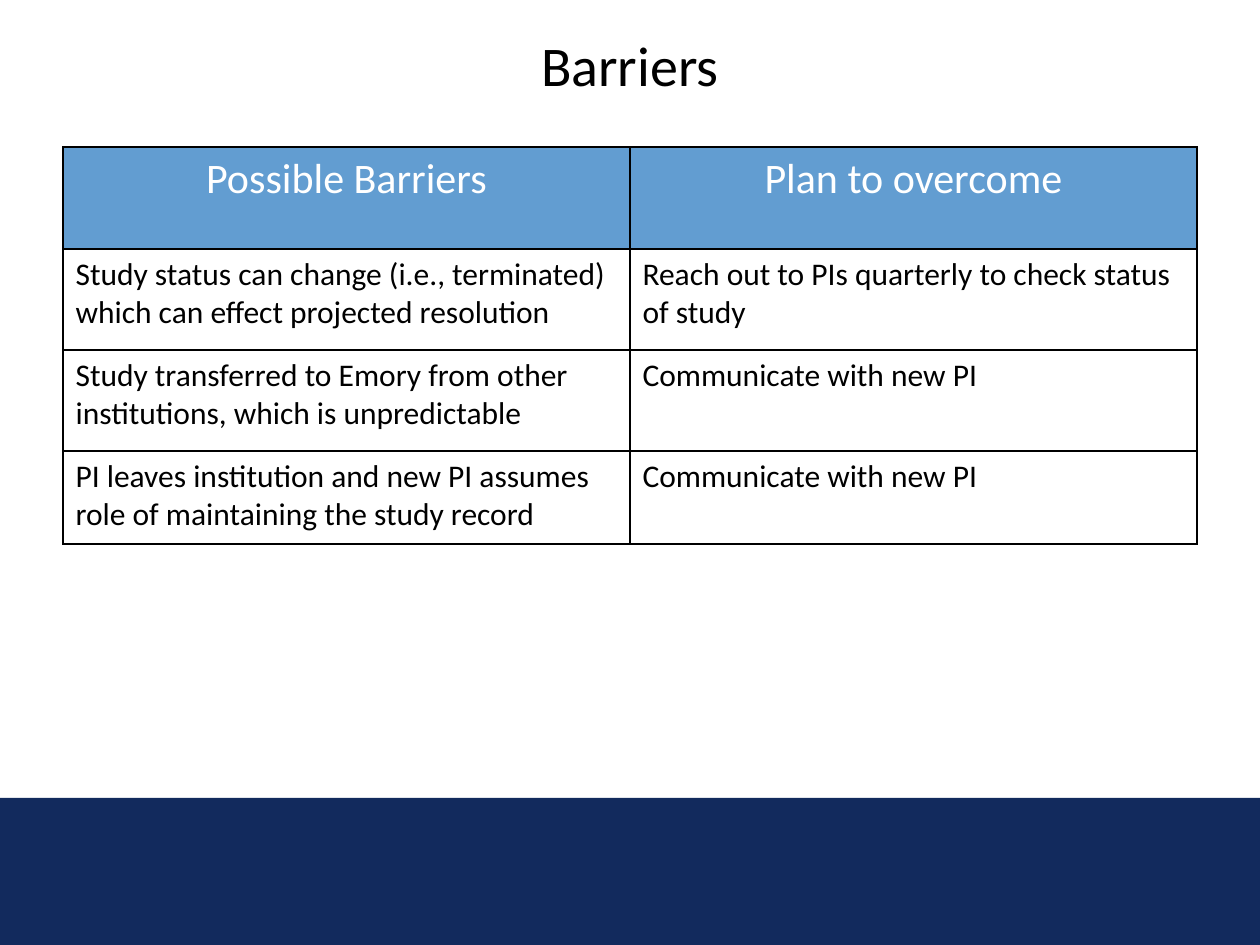
import pptx
import pptx.dml.color
import pptx.enum.shapes
import pptx.enum.text
import pptx.oxml
import pptx.oxml.ns
import pptx.util

RGBColor = pptx.dml.color.RGBColor
ALIGN = pptx.enum.text.PP_ALIGN
ANCHOR = pptx.enum.text.MSO_ANCHOR

# Content
TITLE = "Barriers"
ROWS = [
    ("Possible Barriers", "Plan to overcome"),
    ("Study status can change (i.e., terminated) which can effect projected resolution",
     "Reach out to PIs quarterly to check status of study"),
    ("Study transferred to Emory from other institutions, which is unpredictable",
     "Communicate with new PI"),
    ("PI leaves institution and new PI assumes role of maintaining the study record",
     "Communicate with new PI"),
]

# Colours and formats
BLACK = RGBColor(0x00, 0x00, 0x00)
WHITE = RGBColor(0xFF, 0xFF, 0xFF)
NAVY = RGBColor(0x12, 0x2A, 0x5D)
BLUE = RGBColor(0x62, 0x9D, 0xD1)
TITLE_FORMAT = {"size": 32, "color": BLACK, "align": ALIGN.CENTER}
HEADER_FORMAT = {"size": 24, "color": WHITE, "align": ALIGN.CENTER}
BODY_FORMAT = {"size": 18, "color": BLACK, "align": ALIGN.LEFT}

# Layout in px, 126 to the inch
SCALE = 914400 // 126
SLIDE_SIZE = (1260, 945)
FOOTER_BOX = (0, 798, 1260, 147)
TITLE_BOX = (63, 19, 1134, 91)
TABLE_LEFT, TABLE_TOP, COLUMN_WIDTH = 63, 147, 567
ROW_HEIGHTS = [102, 101, 101, 93]


def emu(*lengths):
    return [pptx.util.Emu(length * SCALE) for length in lengths]


def write_text(text_frame, text, text_format):
    paragraph = text_frame.paragraphs[0]
    paragraph.alignment = text_format["align"]
    run = paragraph.add_run()
    run.text = text
    font_values = {"name": "Calibri", "size": pptx.util.Pt(text_format["size"]), "bold": False}
    for name, value in font_values.items():
        setattr(run.font, name, value)
    run.font.color.rgb = text_format["color"]


def add_borders(cell):
    properties = cell._tc.get_or_add_tcPr()
    for position, side in enumerate(("lnL", "lnR", "lnT", "lnB")):
        border = pptx.oxml.parse_xml(
            f'<a:{side} {pptx.oxml.ns.nsdecls("a")} w="12700"><a:solidFill>'
            f'<a:srgbClr val="{BLACK}"/></a:solidFill></a:{side}>')
        properties.insert(position, border)


def main():
    presentation = pptx.Presentation()
    presentation.slide_width, presentation.slide_height = emu(*SLIDE_SIZE)
    slide = presentation.slides.add_slide(presentation.slide_layouts[6])

    # Footer band
    footer = slide.shapes.add_shape(pptx.enum.shapes.MSO_SHAPE.RECTANGLE, *emu(*FOOTER_BOX))
    footer.shadow.inherit = False
    footer.fill.solid()
    footer.fill.fore_color.rgb = NAVY
    footer.line.fill.background()

    # Title
    title_frame = slide.shapes.add_textbox(*emu(*TITLE_BOX)).text_frame
    title_frame.word_wrap = True
    title_frame.vertical_anchor = ANCHOR.MIDDLE
    write_text(title_frame, TITLE, TITLE_FORMAT)

    # Barriers table
    column_count = len(ROWS[0])
    table_box = emu(TABLE_LEFT, TABLE_TOP, COLUMN_WIDTH * column_count, sum(ROW_HEIGHTS))
    table = slide.shapes.add_table(len(ROWS), column_count, *table_box).table
    for row, height in zip(table.rows, emu(*ROW_HEIGHTS)):
        row.height = height
    for row_index, texts in enumerate(ROWS):
        is_header = row_index == 0
        for column_index, text in enumerate(texts):
            cell = table.cell(row_index, column_index)
            cell.fill.solid()
            cell.fill.fore_color.rgb = BLUE if is_header else WHITE
            add_borders(cell)
            write_text(cell.text_frame, text, HEADER_FORMAT if is_header else BODY_FORMAT)

    presentation.save("out.pptx")


if __name__ == "__main__":
    main()
